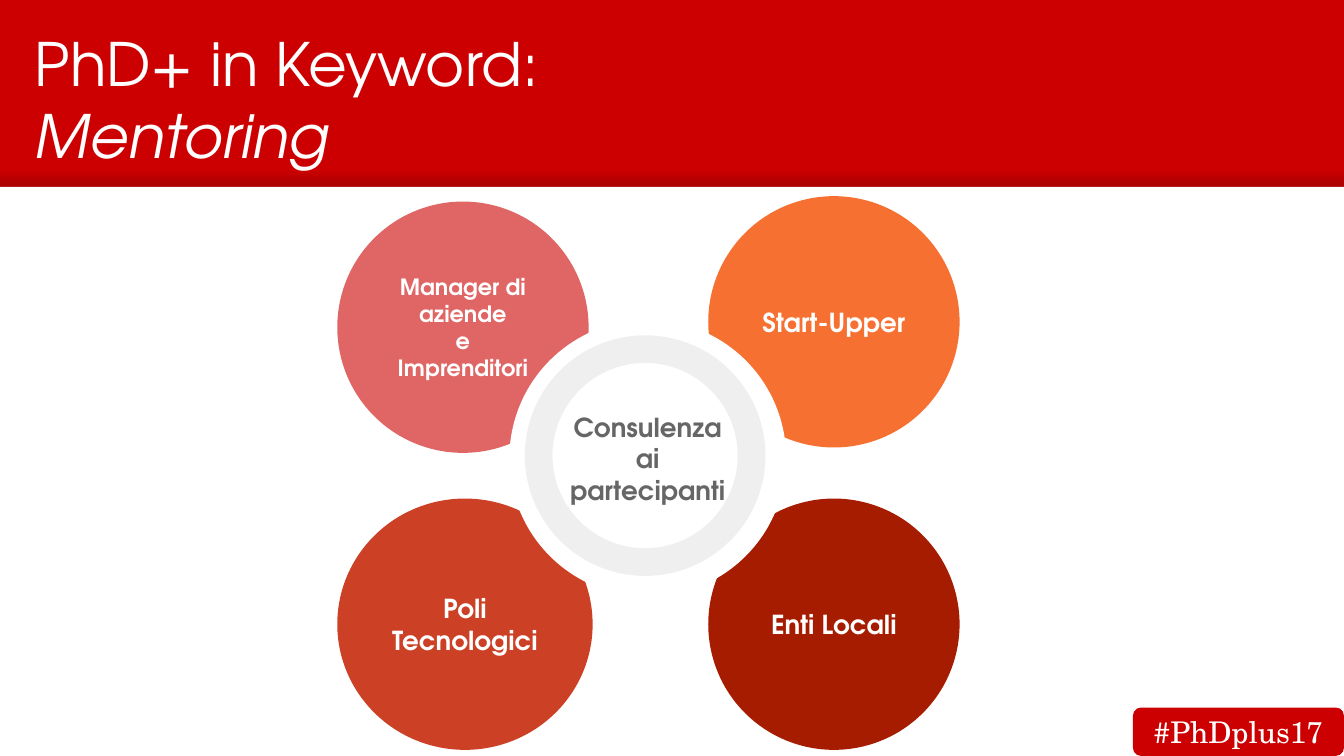
"""Build the mentoring slide: four mentor circles around a central consulting hub."""
import pptx
import pptx.dml.color
import pptx.enum.shapes
import pptx.enum.text
import pptx.oxml.ns
import pptx.util
from lxml import etree

SLIDE_W = 10
SLIDE_H = SLIDE_W * 9 / 16
HEADER_H, SHADE_H = 1.39, 0.12
SANS, SERIF = "TeX Gyre Adventor", "TeX Gyre Schola"
RED, WHITE, GREY, RING_GREY, SHADE = "CC0000", "FFFFFF", "666666", "EFEFEF", "000014"

TITLE = [("PhD+ in Keyword:", False), ("Mentoring", True)]
HUB = ["Consulenza", "ai partecipanti"]
HASHTAG = "#PhDplus17"
COLUMNS, ROWS, CIRCLE = (2.51, 5.27), (1.48, 3.71), 1.87
MENTORS = [
    {"lines": ["Manager di aziende", "e", "Imprenditori"], "fill": "E06666",
     "cell": (0, 0), "size": 12, "shift": 0.02},
    {"lines": ["Start-Upper"], "fill": "F67031", "cell": (1, 0), "shift": -0.02},
    {"lines": ["Poli", "Tecnologici"], "fill": "CC4125", "cell": (0, 1), "width": 1.9},
    {"lines": ["Enti Locali"], "fill": "A61C00", "cell": (1, 1)},
]
HUB_CENTER, HUB_SIZE = (4.82, 3.41), 2.06
RING_CENTER, RING_SIZE = (4.8, 3.39), 1.79
TAG_W, TAG_H = 1.57, 0.36

KINDS = pptx.enum.shapes.MSO_SHAPE
ALIGN = pptx.enum.text.PP_ALIGN
ANCHOR = pptx.enum.text.MSO_ANCHOR


def rgb(value):
    return pptx.dml.color.RGBColor.from_string(value)


def add_block(shapes, kind, box, fill):
    block = shapes.add_shape(kind, *(pptx.util.Inches(v) for v in box))
    block.shadow.inherit = False
    block.line.fill.background()
    block.fill.solid()
    block.fill.fore_color.rgb = rgb(fill)
    return block


def write(block, lines, size, color=WHITE, font=SANS, bold=False,
          align=ALIGN.CENTER, anchor=ANCHOR.MIDDLE, inset=0.1):
    frame = block.text_frame
    frame.word_wrap = True
    frame.vertical_anchor = anchor
    frame.margin_left = frame.margin_right = pptx.util.Inches(0.1)
    frame.margin_top = frame.margin_bottom = pptx.util.Inches(inset)
    for index, (text, italic) in enumerate(lines):
        paragraph = frame.add_paragraph() if index else frame.paragraphs[0]
        paragraph.alignment = align
        run = paragraph.add_run()
        run.text = text
        run.font.name, run.font.size = font, pptx.util.Pt(size)
        run.font.bold, run.font.italic = bold, italic
        run.font.color.rgb = rgb(color)


def upright(lines):
    return [(text, False) for text in lines]


def centered(center, size):
    return center[0] - size / 2, center[1] - size / 2, size, size


def add_header_shade(shapes):
    shade = add_block(shapes, KINDS.RECTANGLE,
                      (0, HEADER_H - SHADE_H, SLIDE_W, SHADE_H), SHADE)
    shade.fill.gradient()
    shade.fill.gradient_angle = 270
    for stop, position in zip(shade.fill.gradient_stops, (0, 1)):
        stop.color.rgb = rgb(SHADE)
        stop.position = position
    tones = shade._element.spPr.iter(pptx.oxml.ns.qn("a:srgbClr"))
    for tone, opacity in zip(tones, (0, 20)):
        alpha = etree.SubElement(tone, pptx.oxml.ns.qn("a:alpha"))
        alpha.set("val", str(opacity * 1000))


def main():
    deck = pptx.Presentation()
    deck.slide_width = pptx.util.Inches(SLIDE_W)
    deck.slide_height = pptx.util.Inches(SLIDE_H)
    slide = deck.slides.add_slide(deck.slide_layouts[6])
    slide.background.fill.solid()
    slide.background.fill.fore_color.rgb = rgb(RED)
    shapes = slide.shapes

    add_header_shade(shapes)
    add_block(shapes, KINDS.RECTANGLE, (0, HEADER_H, SLIDE_W, SLIDE_H - HEADER_H), WHITE)

    mentor_group = shapes.add_group_shape()
    for mentor in MENTORS:
        column, row = mentor["cell"]
        box = (COLUMNS[column], ROWS[row] + mentor.get("shift", 0),
               mentor.get("width", CIRCLE), CIRCLE)
        circle = add_block(mentor_group.shapes, KINDS.OVAL, box, mentor["fill"])
        write(circle, upright(mentor["lines"]), mentor.get("size", 14), bold=True)

    hub = add_block(shapes, KINDS.OVAL, centered(HUB_CENTER, HUB_SIZE), WHITE)
    write(hub, upright(HUB), 14, GREY, bold=True)
    ring = add_block(shapes, KINDS.DONUT, centered(RING_CENTER, RING_SIZE), RING_GREY)
    ring.adjustments[0] = 0.115

    title = add_block(shapes, KINDS.RECTANGLE, (0.16, 0.15, 5.4, 1.11), RED)
    write(title, TITLE, 32, align=ALIGN.LEFT, anchor=ANCHOR.TOP, inset=0.05)

    tag = add_block(shapes, KINDS.ROUNDED_RECTANGLE,
                    (SLIDE_W - TAG_W, SLIDE_H - TAG_H, TAG_W, TAG_H), RED)
    write(tag, upright([HASHTAG]), 16, font=SERIF)

    deck.save("out.pptx")


if __name__ == "__main__":
    main()
